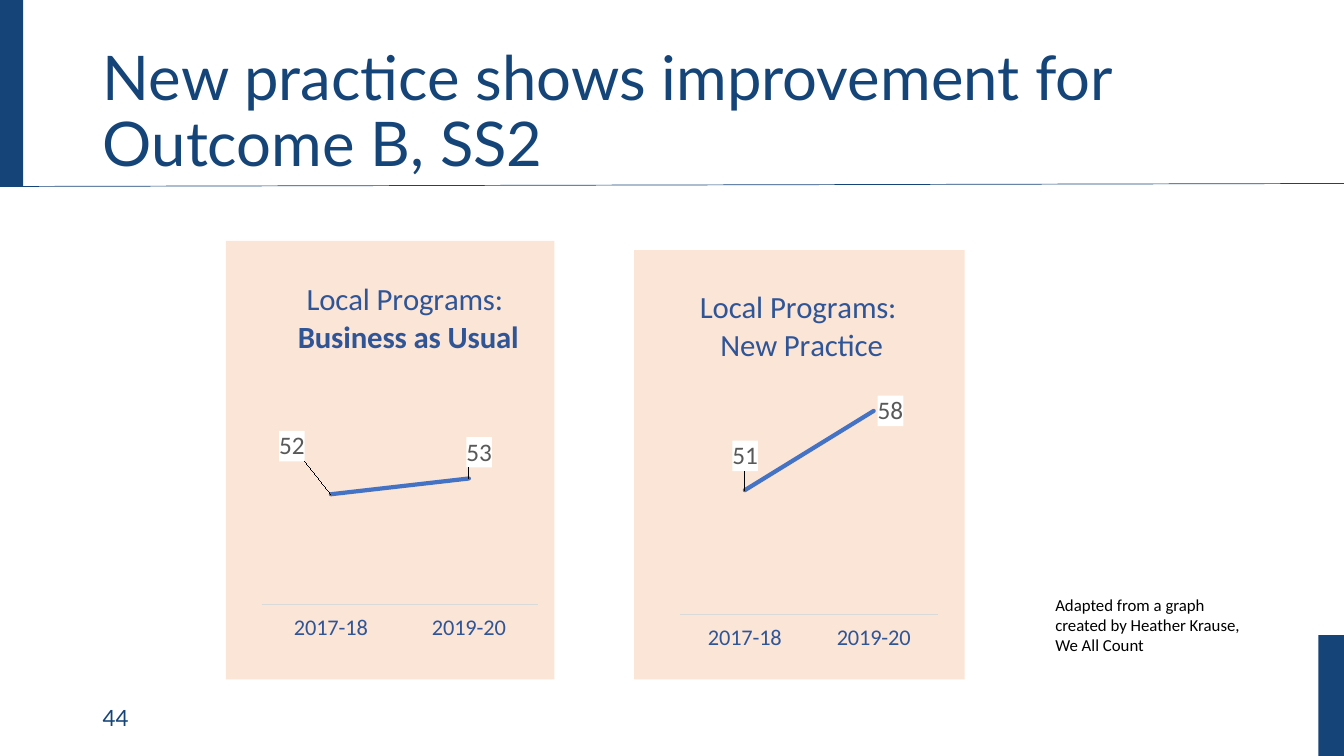
from dataclasses import dataclass

from lxml.etree import SubElement
from pptx import Presentation
from pptx.chart.data import CategoryChartData as ChartData
from pptx.dml.color import RGBColor as RGB
from pptx.enum.chart import XL_CHART_TYPE as ChartType
from pptx.enum.chart import XL_LABEL_POSITION as LabelPosition
from pptx.enum.chart import XL_MARKER_STYLE as Marker
from pptx.enum.chart import XL_TICK_LABEL_POSITION as TickLabels
from pptx.enum.chart import XL_TICK_MARK as Tick
from pptx.enum.shapes import MSO_CONNECTOR as Connector
from pptx.enum.shapes import MSO_SHAPE as Shape
from pptx.enum.text import MSO_ANCHOR as Anchor
from pptx.enum.text import MSO_AUTO_SIZE as AutoSize
from pptx.enum.text import PP_ALIGN as Align
from pptx.oxml import parse_xml
from pptx.oxml.ns import nsdecls, qn
from pptx.util import Inches, Pt


@dataclass(frozen=True)
class Theme:
    navy: str = "154578"
    heading: str = "2F5597"
    trend: str = "4472C4"
    value: str = "595959"
    axis: str = "D9D9D9"
    panel: str = "FBE5D6"
    white: str = "FFFFFF"
    black: str = "000000"
    display: str = "Lato"
    body: str = "Calibri"
    title_size: int = 44
    heading_size: int = 22
    value_size: int = 18
    label_size: int = 16
    credit_size: int = 12


def style(font, size, color, face, bold=False):
    font.size, font.name, font.bold = Pt(size), face, bold
    font.color.rgb = RGB.from_string(color)


def write(frame, *lines, size, color, face, bold_line=None,
          align=Align.LEFT, spacing=None):
    for number, line in enumerate(lines):
        paragraph = frame.paragraphs[0] if number == 0 else frame.add_paragraph()
        paragraph.alignment = align
        if spacing:
            paragraph.line_spacing = spacing
        run = paragraph.add_run()
        run.text = line
        style(run.font, size, color, face, line == bold_line)


def place(parent, index, inner=False, **shares):
    for old in parent.findall(qn("c:layout")):
        parent.remove(old)
    layout = parse_xml(f"<c:layout {nsdecls('c')}/>")
    manual = SubElement(layout, qn("c:manualLayout"))
    if inner:
        SubElement(manual, qn("c:layoutTarget")).set("val", "inner")
    if parent.tag != qn("c:dLbl"):
        for mode in ("xMode", "yMode"):
            SubElement(manual, qn(f"c:{mode}")).set("val", "edge")
    for key, share in shares.items():
        SubElement(manual, qn(f"c:{key}")).set("val", str(share))
    parent.insert(index, layout)


def area(color=None):
    fill = (f'<a:solidFill><a:srgbClr val="{color}"/></a:solidFill>'
            if color else "<a:noFill/>")
    return parse_xml(f"<c:spPr {nsdecls('c', 'a')}>{fill}"
                     "<a:ln><a:noFill/></a:ln></c:spPr>")


class Deck:
    """Draws elements on one slide, with lengths in percent of its size."""

    def __init__(self, theme):
        self.theme = theme
        self.file = Presentation()
        self.file.slide_width, self.file.slide_height = Inches(13.333), Inches(7.5)
        self.slide = self.file.slides.add_slide(self.file.slide_layouts[5])

    def box(self, x, y, width, height):
        across, down = self.file.slide_width / 100, self.file.slide_height / 100
        return [round(n) for n in (x * across, y * down, width * across, height * down)]

    def bar(self, *at):
        bar = self.slide.shapes.add_shape(Shape.RECTANGLE, *self.box(*at))
        bar.shadow.inherit = False
        bar.fill.solid()
        bar.fill.fore_color.rgb = RGB.from_string(self.theme.navy)
        bar.line.fill.background()

    def rule(self, *ends):
        rule = self.slide.shapes.add_connector(Connector.STRAIGHT, *self.box(*ends))
        rule.line.color.rgb = RGB.from_string(self.theme.navy)
        rule.line.width = Pt(0.5)
        SubElement(rule._element.spPr, qn("a:effectLst"))

    def title(self, text, *at):
        title = self.slide.shapes.title
        title.left, title.top, title.width, title.height = self.box(*at)
        frame = title.text_frame
        frame.word_wrap, frame.auto_size = True, AutoSize.NONE
        frame.vertical_anchor = Anchor.MIDDLE
        write(frame, text, size=self.theme.title_size, color=self.theme.navy,
              face=self.theme.display, spacing=0.9)

    def text(self, text, *at, anchor=Anchor.TOP, **look):
        frame = self.slide.shapes.add_textbox(*self.box(*at)).text_frame
        frame.word_wrap, frame.vertical_anchor = True, anchor
        write(frame, text, **look)

    def trend(self, *at, heading, heading_at, scores, scale, plot_at, shifts,
              bold_line=None):
        theme = self.theme
        data = ChartData()
        data.categories = ["2017-18", "2019-20"]
        data.add_series("Series 1", scores)
        chart = self.slide.shapes.add_chart(
            ChartType.LINE, *self.box(*at), data).chart
        chart.has_legend = False
        style(chart.font, 10, theme.black, theme.body)

        write(chart.chart_title.text_frame, *heading, size=theme.heading_size,
              color=theme.heading, face=theme.body, bold_line=bold_line,
              align=Align.CENTER)
        place(chart.chart_title._element, 1, **dict(zip("xy", heading_at)))

        years, values = chart.category_axis, chart.value_axis
        style(years.tick_labels.font, theme.label_size, theme.heading, theme.body)
        years.major_tick_mark = years.minor_tick_mark = Tick.NONE
        years.tick_label_position = TickLabels.LOW
        years.format.line.color.rgb = RGB.from_string(theme.axis)
        years.format.line.width = Pt(0.75)
        values.minimum_scale, values.maximum_scale = scale
        values.major_unit = 5
        values.has_major_gridlines = values.visible = False

        root = chart._chartSpace
        root.find(qn("c:chart")).addnext(area(theme.panel))
        plot_area = root.find(".//" + qn("c:plotArea"))
        place(plot_area, 0, inner=True, **dict(zip("xywh", plot_at)))
        plot_area.append(area())

        chart.plots[0].vary_by_categories = False
        outcome = chart.plots[0].series[0]
        outcome.smooth, outcome.marker.style = False, Marker.NONE
        stroke = outcome.format.line
        stroke.color.rgb = RGB.from_string(theme.trend)
        stroke.width = Pt(3)
        outcome._element.find(".//" + qn("a:ln")).set("cap", "rnd")
        for index in range(len(scores)):
            label = outcome.points[index].data_label
            style(label.font, theme.value_size, theme.value, theme.body)
            label.position = LabelPosition.RIGHT
        for tag, shift in zip(outcome._element.findall(".//" + qn("c:dLbl")), shifts):
            tag.find(qn("c:txPr")).addprevious(area(theme.white))
            if shift:
                place(tag, 1, **dict(zip("xy", shift)))


def main():
    theme = Theme()
    deck = Deck(theme)
    deck.bar(0, 0, 1.73, 24.67)
    deck.rule(0, 24.67, 100, 24.27)
    deck.bar(98.1, 84, 1.9, 16)
    deck.title("New practice shows improvement for Outcome B, SS2",
               6.9, 5.33, 86.25, 19.33)
    deck.trend(16.8, 31.87, 24.45, 58,
               heading=["Local Programs: ", "Business as Usual"],
               bold_line="Business as Usual", heading_at=(0.21, 0.08),
               scores=(52, 53), scale=(45, 65), plot_at=(0.11, 0.11, 0.84, 0.72),
               shifts=[(-0.17, -0.11), (-0.02, -0.06)])
    deck.trend(47.18, 33.07, 24.6, 56.8,
               heading=["Local Programs: ", "New Practice"], heading_at=(0.19, 0.08),
               scores=(51, 58), scale=(40, 65), plot_at=(0.14, 0.19, 0.78, 0.66),
               shifts=[(-0.05, -0.08), None])
    deck.text("Adapted from a graph created by Heather Krause, We All Count",
              77.78, 78, 15.3, 9.47, size=theme.credit_size, color=theme.black,
              face=theme.body)
    deck.text("44", 6.9, 92.27, 22.5, 5.33, anchor=Anchor.MIDDLE,
              size=theme.label_size, color=theme.navy, face=theme.display)
    deck.file.save("out.pptx")


if __name__ == "__main__":
    main()
